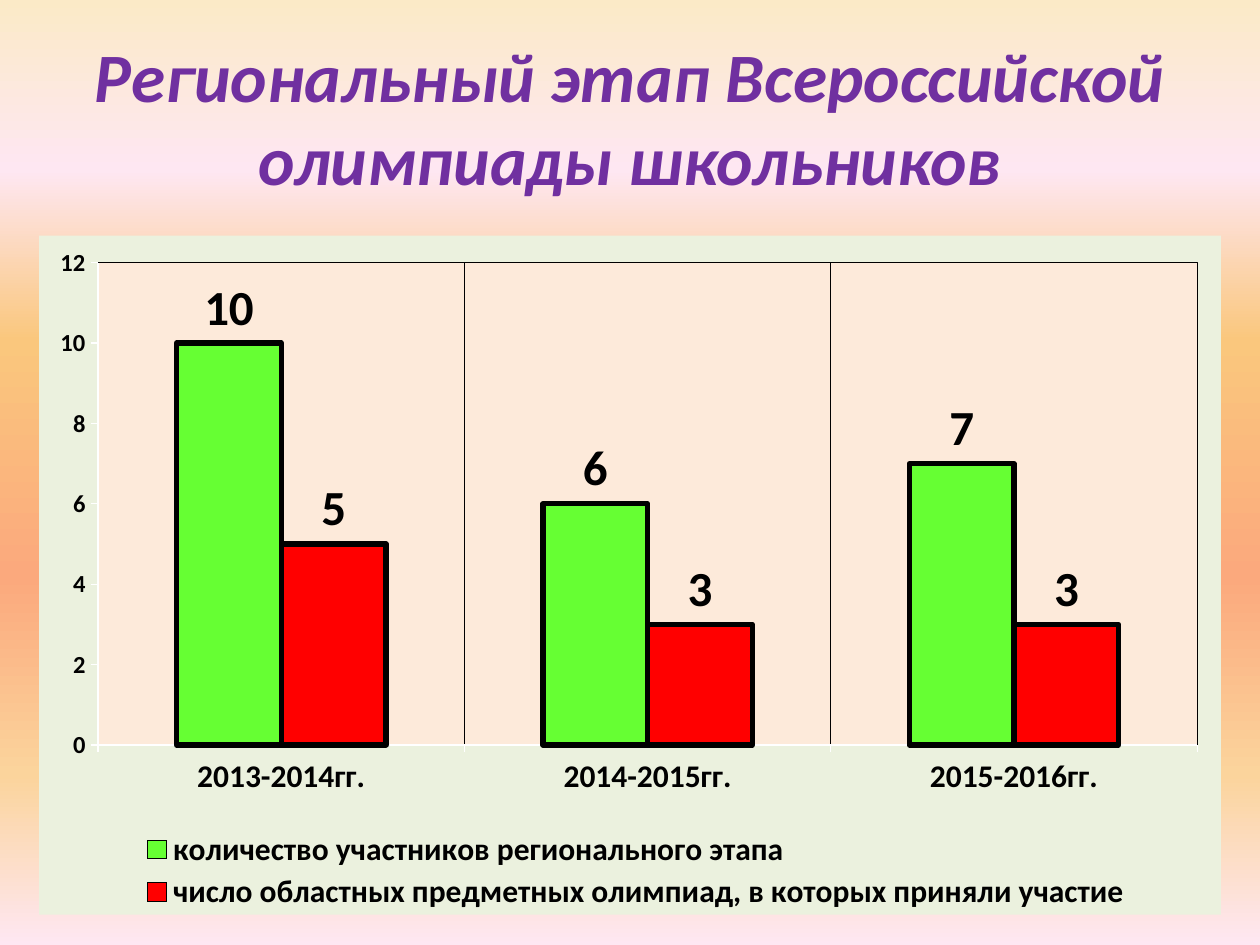
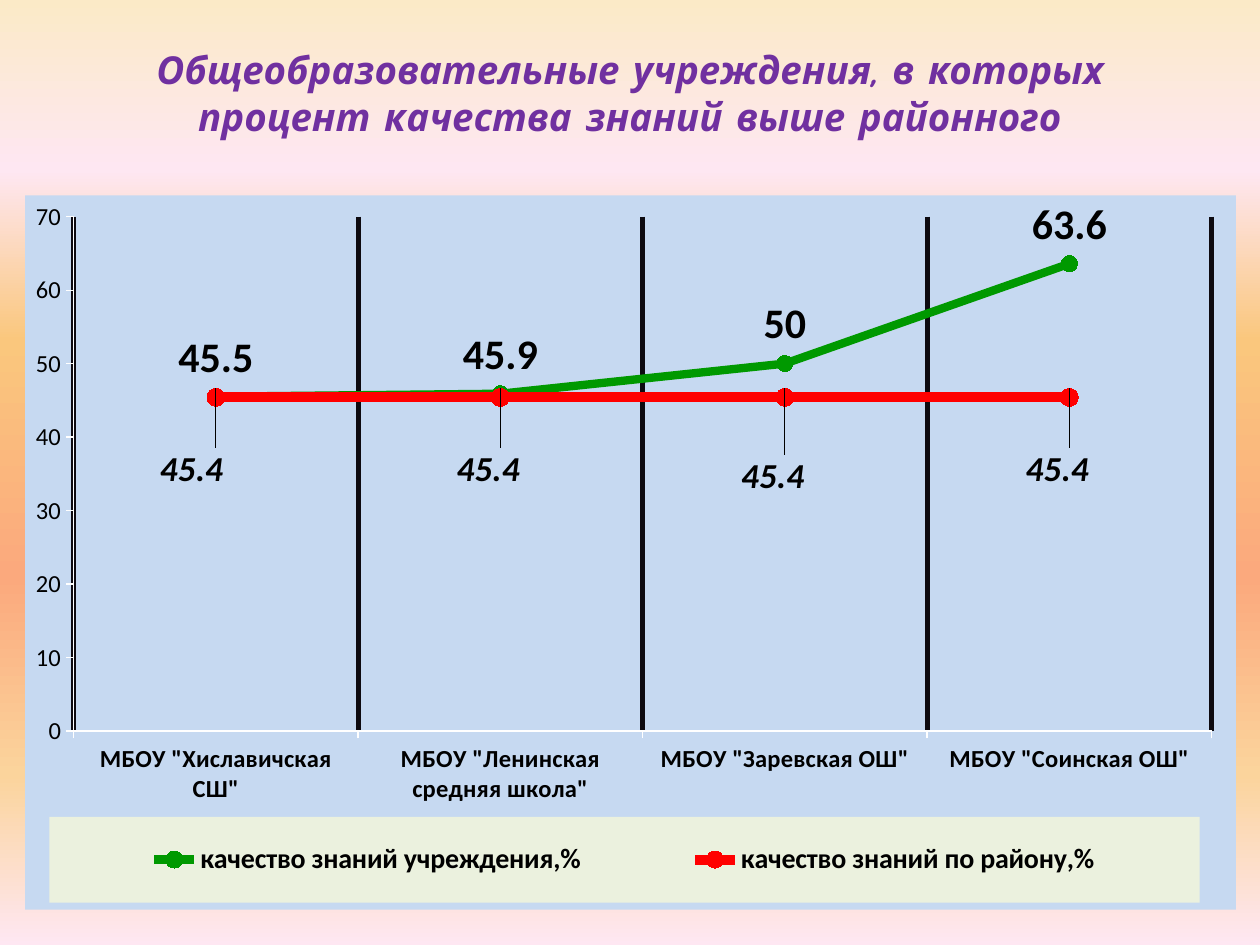
"""Build two slides with charts on school olympiads and quality of knowledge."""
from dataclasses import dataclass

from lxml.etree import SubElement
from pptx import Presentation
from pptx.chart.data import CategoryChartData
from pptx.dml.color import RGBColor
from pptx.enum.chart import (XL_CHART_TYPE, XL_LABEL_POSITION, XL_LEGEND_POSITION,
                             XL_MARKER_STYLE, XL_TICK_MARK)
from pptx.enum.text import MSO_ANCHOR, MSO_AUTO_SIZE, PP_ALIGN
from pptx.oxml import parse_xml
from pptx.oxml.ns import nsdecls, qn
from pptx.util import Inches, Pt

PURPLE = "7030A0"
BLACK = "000000"
WHITE = "FFFFFF"
PALE_GREEN = "EBF1DE"
PALE_ORANGE = "FDEADA"
PALE_BLUE = "C6D9F1"
GRADIENT = [(0, "FBEAC7"), (18, "FEE7F2"), (36, "FAC77D"),
            (61, "FBA97D"), (82, "FBD49C"), (100, "FEE7F2")]


@dataclass
class SeriesStyle:
    """Look of one chart series and its labels."""
    color: str
    line_color: str
    line_width: float
    label_size: float
    marker_size: int = 0
    marker_color: str = ""


def rgb(color):
    """Turn a hex string into a colour."""
    return RGBColor.from_string(color)


def style_font(font, size, color=BLACK, bold=False, italic=False, name="Calibri"):
    """Format a font."""
    font.size, font.bold, font.italic, font.name = Pt(size), bold, italic, name
    font.color.rgb = rgb(color)


def style_line(line, color, width):
    """Colour a line and set its width in points."""
    line.color.rgb = rgb(color)
    line.width = Pt(width)


def style_fill(fill, color):
    """Give a solid fill."""
    fill.solid()
    fill.fore_color.rgb = rgb(color)


def set_background(master):
    """Give every slide the vertical gradient through its master."""
    fill = master.background.fill
    fill.gradient()
    fill.gradient_angle = 270
    stops = master.element.xpath("./p:cSld/p:bg/p:bgPr/a:gradFill/a:gsLst")[0]
    stops.clear()
    for position, color in GRADIENT:
        stop = SubElement(stops, qn("a:gs"), pos=str(position * 1000))
        SubElement(stop, qn("a:srgbClr"), val=color)


def add_titled_slide(presentation, title, height, size, font_name):
    """Add a slide with a formatted title."""
    slide = presentation.slides.add_slide(presentation.slide_layouts[5])
    shape = slide.shapes.title
    shape.left, shape.top = Inches(0.5), Inches(0.3)
    shape.width, shape.height = Inches(9), Inches(height)
    frame = shape.text_frame
    frame.text = title
    frame.word_wrap = True
    frame.auto_size = MSO_AUTO_SIZE.NONE
    frame.vertical_anchor = MSO_ANCHOR.MIDDLE
    paragraph = frame.paragraphs[0]
    paragraph.alignment = PP_ALIGN.CENTER
    style_font(paragraph.font, size, PURPLE, True, True, font_name)
    return slide


def area_properties(fill, line=None):
    """Make the fill and outline element of a chart area."""
    outline = f'<a:solidFill><a:srgbClr val="{line}"/></a:solidFill>' if line else "<a:noFill/>"
    return parse_xml(
        f'<c:spPr {nsdecls("c", "a")}><a:solidFill><a:srgbClr val="{fill}"/></a:solidFill>'
        f'<a:ln w="9525">{outline}</a:ln></c:spPr>')


def set_layout(parent, index, inner=False, **fractions):
    """Place a chart part by fractions of the chart size."""
    for old_layout in parent.findall(qn("c:layout")):
        parent.remove(old_layout)
    layout = parse_xml(f'<c:layout {nsdecls("c")}/>')
    manual = SubElement(layout, qn("c:manualLayout"))
    if inner:
        SubElement(manual, qn("c:layoutTarget"), val="inner")
    if "w" in fractions:
        for mode in ("xMode", "yMode"):
            SubElement(manual, qn(f"c:{mode}"), val="edge")
    for name, value in fractions.items():
        SubElement(manual, qn(f"c:{name}"), val=str(value))
    parent.insert(index, layout)


def add_chart(slide, chart_type, box, categories, series, fill):
    """Add a chart with its own background and no title."""
    data = CategoryChartData()
    data.categories = categories
    for name, values in series:
        data.add_series(name, values)
    chart = slide.shapes.add_chart(chart_type, *map(Inches, box), data).chart
    chart.has_title = False
    style_font(chart.font, 10, WHITE)
    chart.element.find(qn("c:chart")).addnext(area_properties(fill))
    chart.plots[0].vary_by_categories = False
    return chart


def style_plot(chart, fill, layout, border=None):
    """Fill and place the plot area."""
    plot_area = chart.element.find(qn("c:chart")).find(qn("c:plotArea"))
    plot_area.append(area_properties(fill, border))
    set_layout(plot_area, 0, inner=True, **layout)


def style_axes(chart, category_size, value_bold, maximum, step, grid_color, grid_width):
    """Format both axes and the vertical grid."""
    category_axis, value_axis = chart.category_axis, chart.value_axis
    for axis, size, bold in ((category_axis, category_size, True), (value_axis, 14, value_bold)):
        style_font(axis.tick_labels.font, size, bold=bold)
        style_line(axis.format.line, WHITE, 0.75)
        axis.major_tick_mark = XL_TICK_MARK.OUTSIDE
    category_axis.has_major_gridlines = True
    style_line(category_axis.major_gridlines.format.line, grid_color, grid_width)
    value_axis.has_major_gridlines = False
    value_axis.minimum_scale, value_axis.maximum_scale = 0, maximum
    value_axis.major_unit = step


def add_legend(chart, position, size, layout, fill=None):
    """Add a placed legend, with a fill if wanted."""
    chart.has_legend = True
    legend = chart.legend
    legend.position = position
    legend.include_in_layout = False
    style_font(legend.font, size, bold=True)
    element = chart.element.find(qn("c:chart")).find(qn("c:legend"))
    set_layout(element, 1, **layout)
    if fill:
        element.find(qn("c:overlay")).addnext(area_properties(fill))


def style_series(chart, styles, label_position):
    """Format all series, their markers and labels."""
    for series, style in zip(chart.plots[0].series, styles):
        style_line(series.format.line, style.line_color, style.line_width)
        if style.marker_size:
            series.smooth = False
            series.marker.style = XL_MARKER_STYLE.CIRCLE
            series.marker.size = style.marker_size
            style_fill(series.marker.format.fill, style.marker_color)
            style_line(series.marker.format.line, style.color, 0.75)
        else:
            style_fill(series.format.fill, style.color)
        labels = series.data_labels
        labels.show_value = True
        labels.position = label_position
        style_font(labels.font, style.label_size, bold=True)


def lower_labels(series, shifts, size):
    """Move each label of a series below its line, in italics."""
    for index, (right, down) in enumerate(shifts):
        label = series.points[index].data_label
        style_font(label.font, size, bold=True, italic=True)
        label.position = XL_LABEL_POSITION.ABOVE
    labels = series.data_labels._element.findall(qn("c:dLbl"))
    for label, (right, down) in zip(labels, shifts):
        set_layout(label, 1, x=right, y=down)


def build_olympiad_slide(presentation):
    """Show participation in the regional stage as columns."""
    slide = add_titled_slide(
        presentation, "Региональный этап Всероссийской олимпиады школьников",
        1.25, 39.6, "Calibri")
    chart = add_chart(
        slide, XL_CHART_TYPE.COLUMN_CLUSTERED, (0.31, 1.87, 9.38, 5.39),
        ["2013-2014гг.", "2014-2015гг.", "2015-2016гг."],
        [("количество участников регионального этапа", (10, 6, 7)),
         ("число областных предметных олимпиад, в которых приняли участие", (5, 3, 3))],
        PALE_GREEN)
    chart.plots[0].gap_width = 150
    style_plot(chart, PALE_ORANGE, dict(x=0.05, y=0.04, w=0.93, h=0.71), BLACK)
    style_axes(chart, 18, True, 12, 2, BLACK, 0.75)
    add_legend(chart, XL_LEGEND_POSITION.BOTTOM, 18, dict(x=0.08, y=0.87, w=0.85, h=0.13))
    style_series(chart, [SeriesStyle("66FF33", BLACK, 3, 28),
                         SeriesStyle("FF0000", BLACK, 3, 28)], XL_LABEL_POSITION.OUTSIDE_END)


def build_quality_slide(presentation):
    """Compare schools with the district average as lines."""
    slide = add_titled_slide(
        presentation,
        "Общеобразовательные учреждения, в которых процент качества знаний выше районного",
        0.87, 22, "Comic Neue")
    chart = add_chart(
        slide, XL_CHART_TYPE.LINE_MARKERS, (0.2, 1.55, 9.61, 5.67),
        ['МБОУ "Хиславичская СШ"', 'МБОУ "Ленинская средняя школа"',
         'МБОУ "Заревская ОШ"', 'МБОУ "Соинская ОШ"'],
        [("качество знаний учреждения,%", (45.5, 45.9, 50, 63.6)),
         ("качество знаний по району,%", (45.4,) * 4)],
        PALE_BLUE)
    style_plot(chart, PALE_BLUE, dict(x=0.04, y=0.03, w=0.94, h=0.72))
    style_axes(chart, 14, False, 70, 10, "0D0A10", 2.75)
    add_legend(chart, XL_LEGEND_POSITION.RIGHT, 16,
               dict(x=0.02, y=0.87, w=0.95, h=0.12), PALE_GREEN)
    style_series(chart, [SeriesStyle("009900", "009900", 4.75, 24, 9, "00FF00"),
                         SeriesStyle("FF0000", "FF0000", 5.75, 20, 10, "FFFF00")],
                 XL_LABEL_POSITION.ABOVE)
    district = chart.plots[0].series[1]
    lower_labels(district, [(-0.02, 0.15), (-0.01, 0.15), (-0.01, 0.16), (-0.01, 0.15)], 20)


def main():
    """Build and save the presentation."""
    presentation = Presentation()
    presentation.slide_width, presentation.slide_height = Inches(10), Inches(7.5)
    set_background(presentation.slide_master)
    build_olympiad_slide(presentation)
    build_quality_slide(presentation)
    presentation.save("out.pptx")


if __name__ == "__main__":
    main()
